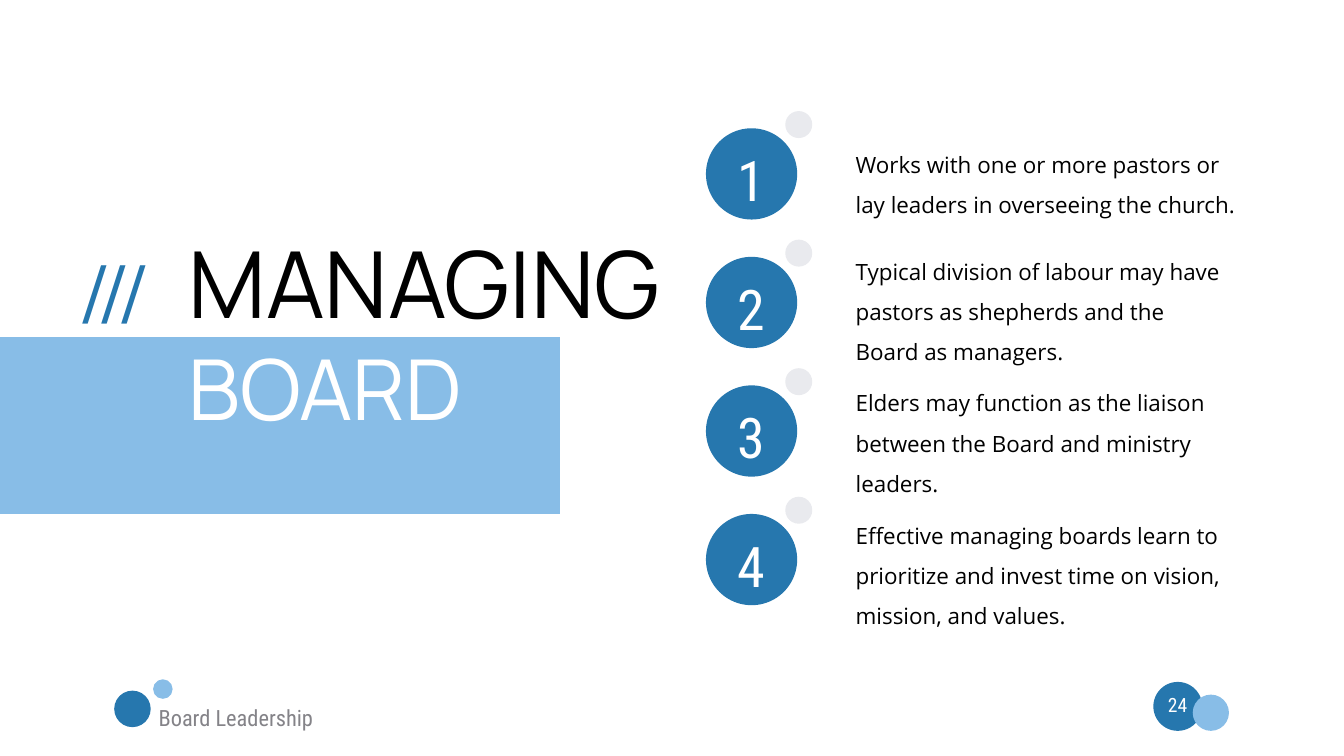
from pptx import Presentation
from pptx.dml.color import RGBColor
from pptx.enum.shapes import MSO_SHAPE as SHAPE
from pptx.enum.text import MSO_ANCHOR as ANCHOR, MSO_AUTO_SIZE as FIT, PP_ALIGN as ALIGN
from pptx.util import Cm, Pt

BLUE = RGBColor(0x26, 0x77, 0xAE)
SKY = RGBColor(0x88, 0xBD, 0xE7)
PALE = RGBColor(0xE9, 0xEA, 0xEE)
GREY = RGBColor(0x84, 0x83, 0x88)
BLACK = RGBColor(0, 0, 0)
WHITE = RGBColor(0xFF, 0xFF, 0xFF)

HEAD, BODY, LABEL = "Manrope", "Open Sans", "Roboto Condensed"
FRAME = {
    "margin_left": Cm(0.38), "margin_right": Cm(0.38),
    "margin_top": Cm(0.2), "margin_bottom": Cm(0.2),
    "word_wrap": True, "auto_size": FIT.SHAPE_TO_FIT_TEXT,
    "vertical_anchor": ANCHOR.TOP,
}
ROW_PITCH = 4.86
ROWS = [
    ("Works with one or more pastors or lay leaders in overseeing the church.", 0.15, 15.27),
    ("Typical division of labour may have pastors as shepherds and the Board as managers.",
     -0.67, 14.91),
    ("Elders may function as the liaison between the Board and ministry leaders.",
     -0.55, 14.91),
    ("Effective managing boards learn to prioritize and invest time on vision, "
     "mission, and values.", -0.41, 14.91),
]


def set_attrs(obj, values):
    """Set each named value on the object."""
    for name, value in values.items():
        setattr(obj, name, value)


def add_run(p, text, size, font, color):
    """Append a formatted run to a paragraph."""
    r = p.add_run()
    r.text = text
    set_attrs(r.font, {"size": Pt(size), "name": font})
    r.font.color.rgb = color


def add_filled(s, kind, box, color):
    """Add a plain filled shape without outline."""
    sp = s.shapes.add_shape(kind, *map(Cm, box))
    sp.shadow.inherit = False
    sp.fill.solid()
    sp.fill.fore_color.rgb = color
    sp.line.fill.background()


def add_text(s, box, text, size, font, color, align=ALIGN.LEFT, spacing=1.0):
    """Add a text box holding one paragraph."""
    tf = s.shapes.add_textbox(*map(Cm, box)).text_frame
    set_attrs(tf, FRAME)
    p = tf.paragraphs[0]
    set_attrs(p, {"alignment": align, "line_spacing": spacing})
    add_run(p, text, size, font, color)


def add_footer(s, x, y, w):
    """Add the footer label on the left and the page number on the right."""
    right = x + w
    add_filled(s, SHAPE.OVAL, (right - 2.86, y + 0.1, 1.85, 1.85), BLUE)
    add_text(s, (right - 2.86, y + 0.33, 1.83, 1.52), "24", 21, LABEL, WHITE, ALIGN.CENTER)
    add_filled(s, SHAPE.OVAL, (x, y + 0.43, 1.38, 1.38), BLUE)
    add_text(s, (x + 1.3, y + 0.73, 6.73, 1.42), "Board Leadership", 24, LABEL, GREY)
    add_filled(s, SHAPE.OVAL, (x + 1.47, y, 0.74, 0.74), SKY)
    add_filled(s, SHAPE.OVAL, (right - 1.37, y + 0.58, 1.37, 1.37), SKY)


def add_heading(s, x, y, w):
    """Add the band, the two-line title and the slashes."""
    add_filled(s, SHAPE.RECTANGLE, (x, y + 4.42, 21.18, 6.68), SKY)
    title = s.shapes.title
    title.element.getparent().append(title.element)
    set_attrs(title, {"left": Cm(x + 6.76), "top": Cm(y),
                      "width": Cm(w - 6.76), "height": Cm(8.46)})
    set_attrs(title.text_frame, FRAME)
    p = title.text_frame.paragraphs[0]
    p.alignment = ALIGN.LEFT
    add_run(p, "MANAGING", 99, HEAD, BLACK)
    p.add_line_break()
    add_run(p, "BOARD", 90, HEAD, WHITE)
    add_text(s, (x + 2.69, y + 0.71, 4.93, 3.86), "///", 81, LABEL, BLUE)


def add_row(s, x, y, number, text, offset, width):
    """Add a numbered circle with its dot and its text."""
    add_filled(s, SHAPE.OVAL, (x, y, 3.45, 3.45), BLUE)
    add_text(s, (x + 5.28, y + offset, width, 3.3), text, 24, BODY, BLACK, spacing=1.5)
    add_text(s, (x + 0.67, y + 0.46, 2.11, 2.95), str(number), 60, LABEL, WHITE, ALIGN.CENTER)
    add_filled(s, SHAPE.OVAL, (x + 3, y - 0.65, 1.02, 1.02), PALE)


def main():
    """Build the slide and save it."""
    prs = Presentation()
    set_attrs(prs, {"slide_width": Cm(50.83), "slide_height": Cm(28.58)})
    s = prs.slides.add_slide(prs.slide_layouts[5])
    add_footer(s, 4.32, 25.68, 42.16)
    add_heading(s, 0, 8.33, 26.7)
    for i, row in enumerate(ROWS):
        add_row(s, 26.7, 4.85 + i * ROW_PITCH, i + 1, *row)
    prs.save("out.pptx")


if __name__ == "__main__":
    main()
